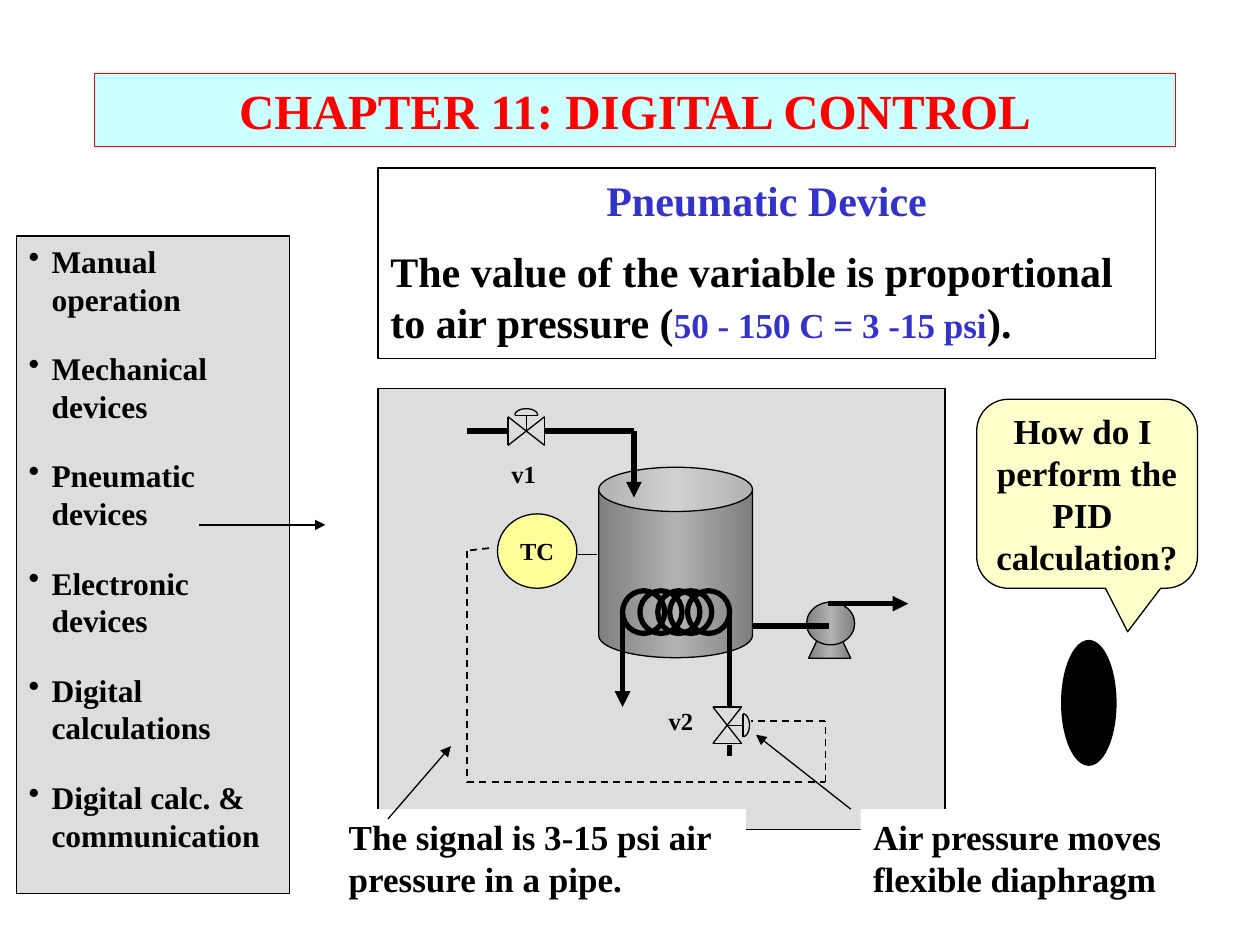
from copy import deepcopy
from dataclasses import dataclass
from itertools import pairwise
from math import cos, pi, sin

from lxml.etree import SubElement
from pptx import Presentation
from pptx.dml.color import RGBColor as RGB
from pptx.enum.dml import MSO_LINE as DASH
from pptx.enum.shapes import MSO_CONNECTOR as CONN, MSO_SHAPE as SHAPE
from pptx.enum.text import MSO_ANCHOR as ANCHOR, PP_ALIGN as ALIGN
from pptx.oxml.ns import qn
from pptx.util import Cm, Pt


@dataclass(frozen=True)
class Theme:
    font: str = "Times New Roman"
    ink: RGB = RGB(0, 0, 0)
    red: RGB = RGB(0xFF, 0, 0)
    blue: RGB = RGB(0x33, 0x33, 0xCC)
    white: RGB = RGB(0xFF, 0xFF, 0xFF)
    aqua: RGB = RGB(0xCC, 0xFF, 0xFF)
    gray: RGB = RGB(0xDD, 0xDD, 0xDD)
    steel: RGB = RGB(0x7F, 0x7F, 0x7F)
    shine: RGB = RGB(0xB2, 0xB2, 0xB2)
    yellow: RGB = RGB(0xFF, 0xFF, 0x99)
    cream: RGB = RGB(0xFF, 0xFF, 0xCC)
    title: int = 28
    head: int = 24
    note: int = 20
    item: int = 18
    tag: int = 14
    thin: float = 0.75
    dash: float = 1
    mid: float = 1.5
    pipe: float = 3


T = Theme()
prs = Presentation()
prs.slide_width, prs.slide_height = Cm(25.4), Cm(19.05)
slide = prs.slides.add_slide(prs.slide_layouts[5])
shapes = slide.shapes


def box(kind, area, fill=None, edge=T.ink, width=T.thin, text="", size=T.note,
        align=ALIGN.LEFT, gap=0.5, wrap=True, anchor=ANCHOR.TOP):
    """Add a shape in cm; each line of text is a paragraph."""
    item = shapes.add_shape(kind, *map(Cm, area))
    item.shadow.inherit = False
    if fill is None:
        item.fill.background()
    else:
        item.fill.solid()
        item.fill.fore_color.rgb = fill
    if edge is None:
        item.line.fill.background()
    else:
        item.line.color.rgb = edge
        item.line.width = Pt(width)
    if text:
        frame = item.text_frame
        frame.word_wrap, frame.vertical_anchor = wrap, anchor
        frame.text = text
        for para in frame.paragraphs:
            para.alignment = align
            para.space_before = Pt(size * gap)
            font = para.font
            font.name, font.size, font.bold = T.font, Pt(size), True
            font.color.rgb = T.ink
    return item


def line(x1, y1, x2, y2, width=T.thin, arrow=False, dash=False):
    """Add a straight line in cm, with an arrowhead at its end if asked."""
    item = shapes.add_connector(CONN.STRAIGHT, Cm(x1), Cm(y1), Cm(x2), Cm(y2))
    item.line.color.rgb = T.ink
    item.line.width = Pt(width)
    if dash:
        item.line.dash_style = DASH.DASH
    if arrow:
        SubElement(item.line._get_or_add_ln(), qn("a:tailEnd"), type="triangle")
    SubElement(item.element.spPr, qn("a:effectLst"))


# Title
title = shapes.title
title.left, title.top, title.width, title.height = map(Cm, (1.9, 1.48, 21.8, 1.48))
title.fill.solid()
title.fill.fore_color.rgb = T.aqua
title.line.color.rgb = T.red
title.line.width = Pt(T.thin)
title.text_frame.text = "CHAPTER 11: DIGITAL CONTROL"
para = title.text_frame.paragraphs[0]
para.alignment = ALIGN.CENTER
para.font.name, para.font.size, para.font.bold = T.font, Pt(T.title), True
para.font.color.rgb = T.red

# List of device types
types = ["Manual operation", "Mechanical devices", "Pneumatic devices",
         "Electronic devices", "Digital calculations",
         "Digital calc. & communication"]
menu = box(SHAPE.RECTANGLE, (0.33, 4.76, 5.51, 13.26), T.gray,
           text="\n".join(types), size=T.item, gap=1)
for para in menu.text_frame.paragraphs:
    props = para._p.get_or_add_pPr()
    props.set("marL", str(Cm(0.46)))
    props.set("indent", str(-Cm(0.46)))
    mark = SubElement(props, qn("a:buChar"), char="•")
    props.find(qn("a:defRPr")).addprevious(mark)
line(4.02, 10.58, 6.56, 10.58, T.mid, arrow=True)

# Definition
device = box(SHAPE.RECTANGLE, (7.62, 3.39, 15.67, 3.84), size=T.head, text=(
    "Pneumatic Device\n"
    "The value of the variable is proportional to air pressure ("))
head, body = device.text_frame.paragraphs
head.alignment = ALIGN.CENTER
head.font.color.rgb = T.blue
span = body.add_run()
span.text = "50 - 150 C = 3 -15 psi"
span.font.size = Pt(T.note)
span.font.color.rgb = T.blue
body.add_run().text = ")."

# Panel with tank and pump
box(SHAPE.RECTANGLE, (7.62, 7.83, 11.43, 8.89), T.gray)
tank = box(SHAPE.CAN, (12.07, 9.42, 3.1, 3.84))
tank.adjustments[0] = 0.288
base = box(SHAPE.FLOWCHART_MANUAL_OPERATION, (16.3, 12.91, 0.85, 0.36))
base.rotation = 180
pump = box(SHAPE.OVAL, (16.26, 12.14, 0.97, 0.86))
for part in (tank, base, pump):
    part.fill.gradient()
    part.fill.gradient_angle = 0
    stops = part.element.spPr.find(".//" + qn("a:gsLst"))
    stops.insert(1, deepcopy(stops[0]))
    tones = (0, T.steel), (0.5, T.shine), (1, T.steel)
    for stop, (place, tone) in zip(part.fill.gradient_stops, tones):
        stop.position = place
        stop.color.rgb = tone

# Heating coil
for x in (12.55, 12.9, 13.26, 13.5, 13.86):
    box(SHAPE.FLOWCHART_CONNECTOR, (x, 11.91, 0.85, 0.86), width=T.pipe)

# Pipes: ends and arrowhead
for *ends, arrow in (
    (12.55, 12.4, 12.55, 14.25, True),
    (14.71, 12.4, 14.71, 14.25, False),
    (14.71, 15.01, 14.71, 15.24, False),
    (16.71, 12.62, 15.16, 12.62, False),
    (16.69, 12.17, 18.31, 12.17, True),
    (12.78, 8.69, 12.78, 10.03, True),
    (12.78, 8.69, 10.97, 8.69, False),
    (10.26, 8.69, 9.42, 8.69, False),
):
    line(*ends, T.pipe, arrow)

# Valves: u runs along the pipe, v towards the diaphragm
strokes = [(-0.37, -0.29, -0.37, 0.29), (0.37, -0.29, 0.37, 0.29),
           (-0.37, -0.29, 0.37, 0.29), (-0.37, 0.29, 0.37, -0.29),
           (0, 0, 0, 0.32), (-0.23, 0.32, 0.23, 0.32)]
arc = [(0.23 * cos(k * pi / 16), 0.32 + 0.13 * sin(k * pi / 16))
       for k in range(17)]
for turn in (lambda u, v: (10.61 + u, 8.69 - v),
             lambda u, v: (14.66 + v, 14.62 + u)):
    for u1, v1, u2, v2 in strokes:
        line(*turn(u1, v1), *turn(u2, v2))
    dots = [tuple(map(Cm, turn(u, v))) for u, v in arc]
    pen = shapes.build_freeform(*dots[0])
    pen.add_line_segments(dots[1:], close=False)
    dome = pen.convert_to_shape()
    dome.shadow.inherit = False
    dome.fill.background()
    dome.line.color.rgb = T.ink
    dome.line.width = Pt(T.thin)

# Controller, valve tags and signal line
box(SHAPE.OVAL, (10.03, 10.36, 1.6, 1.5), T.yellow, text="TC", size=T.tag,
    align=ALIGN.CENTER, gap=0, wrap=False, anchor=ANCHOR.MIDDLE)
line(11.66, 11.18, 12.04, 11.18)
for tag, x, y in (("v1", 10.06, 9.12), ("v2", 13.23, 14.1)):
    box(SHAPE.RECTANGLE, (x, y, 1.5, 0.84), edge=None, text=tag, size=T.tag)
route = [(9.86, 11.05), (9.42, 11.1), (9.42, 15.77),
         (16.64, 15.77), (16.64, 14.53), (15.14, 14.53)]
for start, end in pairwise(route):
    line(*start, *end, T.dash, dash=True)

# Captions and their arrows
for x, width, text in (
    (6.78, 8.26, "The signal is 3-15 psi air pressure in a pipe."),
    (17.35, 6.99, "Air pressure moves flexible diaphragm"),
):
    box(SHAPE.RECTANGLE, (x, 16.31, width, 1.96), T.white, None, text=text)
line(17.15, 16.31, 15.24, 14.81, arrow=True)
line(7.82, 16.51, 9.09, 15.04, arrow=True)

# Question, and a plain shape for the one who asks
box(SHAPE.OVAL, (21.39, 12.9, 1.12, 2.54), T.ink, None)
ask = box(SHAPE.ROUNDED_RECTANGULAR_CALLOUT, (19.69, 8.05, 4.45, 3.81), T.cream,
          text="How do I \nperform the\nPID \ncalculation?",
          align=ALIGN.CENTER, gap=0, wrap=False, anchor=ANCHOR.MIDDLE)
for k, value in enumerate((0.184, 0.73, 0.167)):
    ask.adjustments[k] = value

prs.save("out.pptx")
